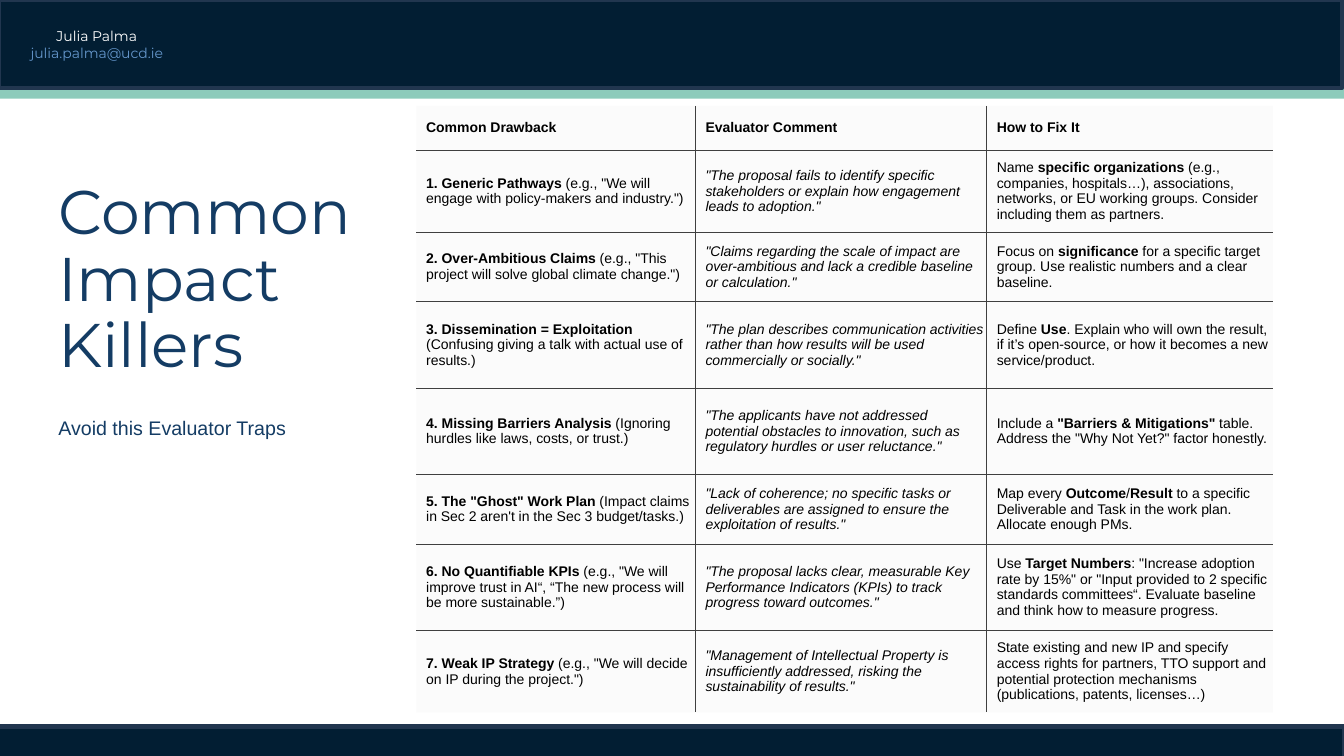
from dataclasses import dataclass

from lxml.etree import SubElement
from pptx import Presentation
from pptx.dml.color import RGBColor
from pptx.enum.shapes import MSO_SHAPE
from pptx.enum.text import MSO_ANCHOR, MSO_AUTO_SIZE, PP_ALIGN
from pptx.oxml import parse_xml
from pptx.oxml.ns import nsdecls, qn
from pptx.slide import Slide
from pptx.table import Table, _Cell
from pptx.text.text import Font
from pptx.util import Cm, Pt


@dataclass(frozen=True)
class Theme:
    navy: str = "021E33"
    navy_edge: str = "21364F"
    mint: str = "8DCBBB"
    heading: str = "143C64"
    white: str = "FFFFFF"
    email: str = "6496CB"
    body: str = "000000"
    cell: str = "F2F2F2"
    cell_opacity: int = 30
    rule: str = "3F3F3F"
    rule_width: float = 0.75
    title_font: str = "Montserrat"
    body_font: str = "Arial"
    title_size: int = 44
    subtitle_size: int = 14
    small_size: int = 10
    plain_table: str = "{2D5ABB26-0587-4C30-8999-92F81FD0307C}"


THEME = Theme()


@dataclass(frozen=True)
class Box:
    left: float
    top: float
    width: float
    height: float

    def emu(self) -> tuple[Cm, Cm, Cm, Cm]:
        return Cm(self.left), Cm(self.top), Cm(self.width), Cm(self.height)


@dataclass(frozen=True)
class Band:
    box: Box
    fill: str
    edge_width: float


@dataclass(frozen=True)
class Line:
    text: str
    color: str


@dataclass(frozen=True)
class Caption:
    box: Box
    lines: tuple[Line, ...]
    font: str
    size: int
    anchor: MSO_ANCHOR = MSO_ANCHOR.TOP
    align: PP_ALIGN = PP_ALIGN.LEFT
    spacing: float = 1.0
    indent: float = 0
    grows: bool = False


@dataclass(frozen=True)
class Killer:
    height: float
    drawback: str
    comment: str
    fix: str


BANDS = (
    Band(Box(-0.05, 2.13, 33.96, 0.36), THEME.mint, 0),
    Band(Box(-0.03, 0, 33.86, 2.21), THEME.navy, 3),
    Band(Box(-0.05, 18.31, 33.94, 0.91), THEME.navy, 3.5),
)

CAPTIONS = (
    Caption(Box(1.22, 1.78, 10.16, 7.95), (Line("Common Impact Killers", THEME.heading),),
            THEME.title_font, THEME.title_size, anchor=MSO_ANCHOR.BOTTOM, spacing=0.9),
    Caption(Box(1.22, 10.36, 17.02, 0.86), (Line("Avoid this Evaluator Traps", THEME.heading),),
            THEME.body_font, THEME.subtitle_size, grows=True),
    Caption(Box(-0.23, 0, 4.7, 2.24),
            (Line("Julia Palma", THEME.white), Line("julia.palma@ucd.ie", THEME.email)),
            THEME.title_font, THEME.small_size, anchor=MSO_ANCHOR.MIDDLE,
            align=PP_ALIGN.CENTER, indent=1.27),
)

TABLE_LEFT, TABLE_TOP = 10.49, 2.67
COLUMN_WIDTHS = (7.04, 7.34, 7.21)
COMMENT_COLUMN = 1
BOLD_MARK = "**"

KILLERS = (
    Killer(1.12, "**Common Drawback**", "**Evaluator Comment**", "**How to Fix It**"),
    Killer(2.06,
           '**1. Generic Pathways** (e.g., "We will engage with policy-makers and industry.")',
           '"The proposal fails to identify specific stakeholders or explain how engagement leads to adoption."',
           "Name **specific organizations **(e.g., companies, hospitals…), associations, networks, "
           "or EU working groups. Consider including them as partners."),
    Killer(1.75,
           '**2. Over-Ambitious Claims** (e.g., "This project will solve global climate change.")',
           '"Claims regarding the scale of impact are over-ambitious and lack a credible baseline or calculation."',
           "Focus on **significance** for a specific target group. Use realistic numbers and a clear baseline."),
    Killer(2.18,
           "**3. Dissemination = Exploitation** (Confusing giving a talk with actual use of results.)",
           '"The plan describes communication activities rather than how results will be used '
           'commercially or socially."',
           "Define **Use**. Explain who will own the result, if it’s open-source, "
           "or how it becomes a new service/product."),
    Killer(2.18,
           "**4. Missing Barriers Analysis** (Ignoring hurdles like laws, costs, or trust.)",
           '"The applicants have not addressed potential obstacles to innovation, such as '
           'regulatory hurdles or user reluctance."',
           'Include a **"Barriers & Mitigations"** table. Address the "Why Not Yet?" factor honestly.'),
    Killer(1.75,
           '**5. The "Ghost" Work Plan** (Impact claims in Sec 2 aren\'t in the Sec 3 budget/tasks.)',
           '"Lack of coherence; no specific tasks or deliverables are assigned to ensure the '
           'exploitation of results."',
           "Map every **Outcome**/**Result **to a specific Deliverable and Task in the work plan. "
           "Allocate enough PMs."),
    Killer(2.18,
           '**6. No Quantifiable KPIs** (e.g., "We will improve trust in AI“, '
           "“The new process will be more sustainable.”)",
           '"The proposal lacks clear, measurable Key Performance Indicators (KPIs) to track '
           'progress toward outcomes."',
           'Use **Target Numbers**: "Increase adoption rate by 15%" or "Input provided to 2 specific '
           "standards committees“. Evaluate baseline and think how to measure progress."),
    Killer(2.06,
           '**7. Weak IP Strategy** (e.g., "We will decide on IP during the project.")',
           '"Management of Intellectual Property is insufficiently addressed, risking the '
           'sustainability of results."',
           "State existing and new IP and specify access rights for partners, TTO support and "
           "potential protection mechanisms (publications, patents, licenses…)"),
)


def style_font(font: Font, name: str, size: int, color: str) -> None:
    font.name = name
    font.size = Pt(size)
    font.color.rgb = RGBColor.from_string(color)


def draw_band(slide: Slide, band: Band) -> None:
    bar = slide.shapes.add_shape(MSO_SHAPE.RECTANGLE, *band.box.emu())
    bar.shadow.inherit = False
    bar.fill.solid()
    bar.fill.fore_color.rgb = RGBColor.from_string(band.fill)
    if band.edge_width:
        bar.line.color.rgb = RGBColor.from_string(THEME.navy_edge)
        bar.line.width = Pt(band.edge_width)
    else:
        bar.line.fill.background()


def draw_caption(slide: Slide, caption: Caption) -> None:
    frame = slide.shapes.add_textbox(*caption.box.emu()).text_frame
    frame.word_wrap = True
    frame.vertical_anchor = caption.anchor
    if caption.grows:
        frame.auto_size = MSO_AUTO_SIZE.SHAPE_TO_FIT_TEXT
    frame.text = "\n".join(line.text for line in caption.lines)
    for paragraph, line in zip(frame.paragraphs, caption.lines):
        paragraph.alignment = caption.align
        paragraph.line_spacing = caption.spacing
        if caption.indent:
            properties = paragraph._p.get_or_add_pPr()
            properties.set("marL", str(Cm(caption.indent)))
            properties.set("indent", str(-Cm(caption.indent / 2)))
        style_font(paragraph.runs[0].font, caption.font, caption.size, line.color)


def style_cell(cell: _Cell, ruled_sides: str) -> None:
    cell.vertical_anchor = MSO_ANCHOR.MIDDLE
    cell.margin_left, cell.margin_right = Cm(0.25), Cm(0.08)
    cell.margin_top = cell.margin_bottom = Cm(0.18)
    cell.fill.solid()
    cell.fill.fore_color.rgb = RGBColor.from_string(THEME.cell)
    properties = cell._tc.get_or_add_tcPr()
    tint = properties.find(qn("a:solidFill")).find(qn("a:srgbClr"))
    SubElement(tint, qn("a:alpha")).set("val", str(THEME.cell_opacity * 1000))
    for position, side in enumerate(ruled_sides):
        properties.insert(position, parse_xml(
            f'<a:ln{side} {nsdecls("a")} w="{Pt(THEME.rule_width)}"><a:solidFill>'
            f'<a:srgbClr val="{THEME.rule}"/></a:solidFill></a:ln{side}>'))


def write_cell(cell: _Cell, marked_text: str, italic: bool) -> None:
    paragraph = cell.text_frame.paragraphs[0]
    for index, part in enumerate(marked_text.split(BOLD_MARK)):
        if part:
            run = paragraph.add_run()
            run.text = part
            style_font(run.font, THEME.body_font, THEME.small_size, THEME.body)
            run.font.bold = index % 2 == 1
            run.font.italic = italic


def fill_table(table: Table) -> None:
    table.first_row = table.horz_banding = False
    table._tbl.tblPr.find(qn("a:tableStyleId")).text = THEME.plain_table
    for column, width in zip(table.columns, COLUMN_WIDTHS):
        column.width = Cm(width)
    last_row, last_column = len(KILLERS) - 1, len(COLUMN_WIDTHS) - 1
    for row, killer in enumerate(KILLERS):
        table.rows[row].height = Cm(killer.height)
        for column, text in enumerate((killer.drawback, killer.comment, killer.fix)):
            inner = {"L": column > 0, "R": column < last_column, "T": row > 0, "B": row < last_row}
            cell = table.cell(row, column)
            style_cell(cell, "".join(side for side, ruled in inner.items() if ruled))
            write_cell(cell, text, italic=row > 0 and column == COMMENT_COLUMN)


def main() -> None:
    presentation = Presentation()
    presentation.slide_width, presentation.slide_height = Cm(33.87), Cm(19.05)
    slide = presentation.slides.add_slide(presentation.slide_layouts[6])
    for band in BANDS:
        draw_band(slide, band)
    table_box = Box(TABLE_LEFT, TABLE_TOP, sum(COLUMN_WIDTHS), sum(k.height for k in KILLERS))
    fill_table(slide.shapes.add_table(len(KILLERS), len(COLUMN_WIDTHS), *table_box.emu()).table)
    for caption in CAPTIONS:
        draw_caption(slide, caption)
    presentation.save("out.pptx")


if __name__ == "__main__":
    main()
